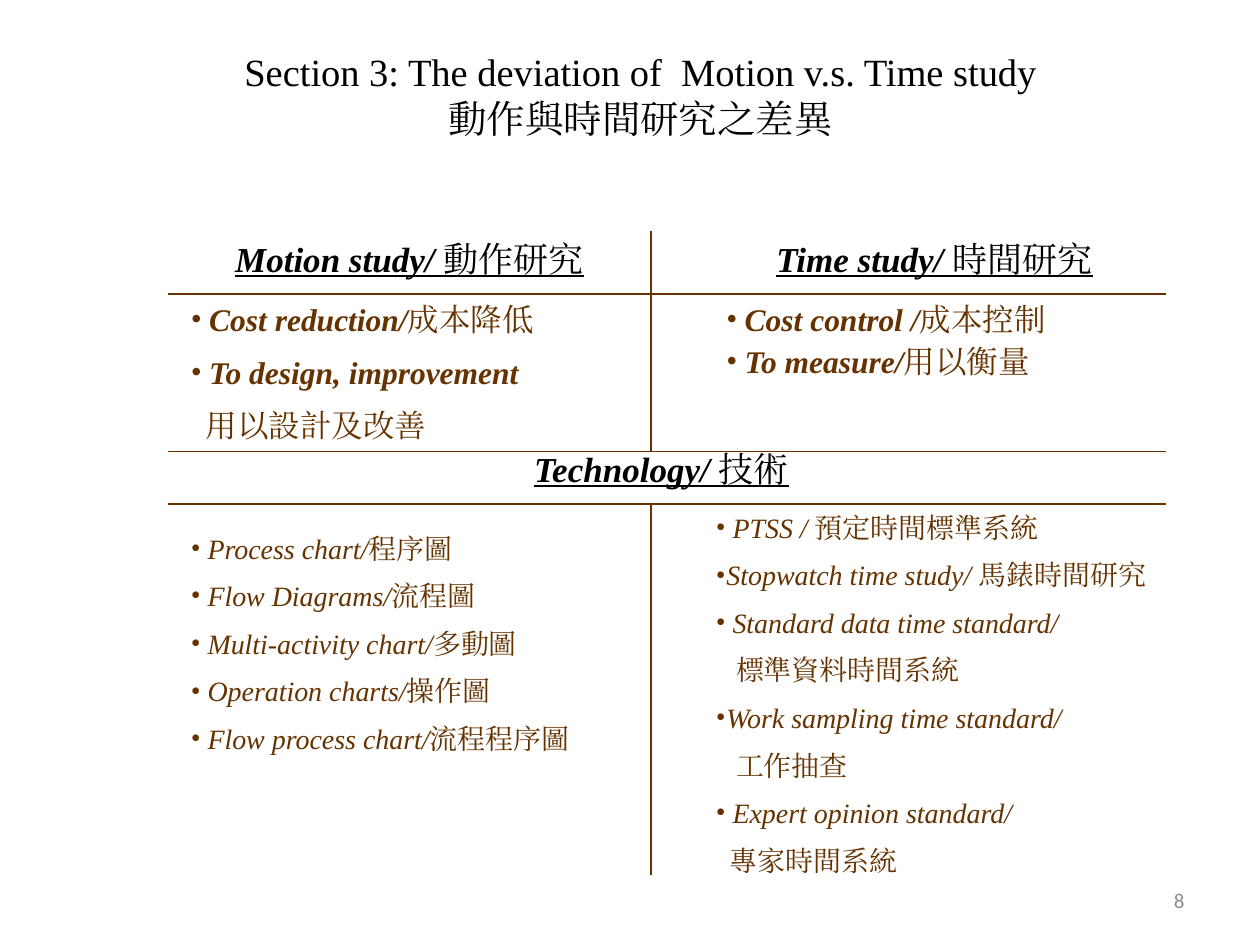
from lxml import etree
from pptx import Presentation
from pptx.dml.color import RGBColor
from pptx.enum.shapes import MSO_CONNECTOR
from pptx.enum.text import MSO_ANCHOR, MSO_AUTO_SIZE, PP_ALIGN
from pptx.oxml.ns import qn
from pptx.util import Pt

STRAIGHT = MSO_CONNECTOR.STRAIGHT
TOP, MIDDLE, BOTTOM = MSO_ANCHOR.TOP, MSO_ANCHOR.MIDDLE, MSO_ANCHOR.BOTTOM
LEFT, CENTER, RIGHT = PP_ALIGN.LEFT, PP_ALIGN.CENTER, PP_ALIGN.RIGHT
GROW = MSO_AUTO_SIZE.SHAPE_TO_FIT_TEXT

COLORS = {"ink": "000000", "brown": "663300", "gray": "8C8C8C"}
SERIF, CJK, SANS = "Times New Roman", "Noto Sans CJK SC", "Calibri"


def add_run(paragraph, text, *, size, color, font=SERIF, bold=False, italic=False, underline=False):
    run = paragraph.add_run()
    run.text = text
    run.font.name = font
    run.font.size = Pt(size)
    run.font.bold, run.font.italic, run.font.underline = bold, italic, underline
    run.font.color.rgb = RGBColor.from_string(COLORS[color])
    east_asian = etree.Element(qn("a:ea"), typeface=SERIF)
    run.font._element.find(qn("a:latin")).addnext(east_asian)


def add_frame(slide, box, anchor=TOP, grow=False):
    frame = slide.shapes.add_textbox(*map(Pt, box)).text_frame
    frame.word_wrap = True
    frame.vertical_anchor = anchor
    if grow:
        frame.auto_size = GROW
    return frame


def format_paragraph(paragraph, *, align=LEFT, margin=0, bullet=False):
    """Half a line of space before; a bullet hangs in the left margin."""
    paragraph.alignment = align
    properties = paragraph._p.get_or_add_pPr()
    properties.set("marL", str(Pt(margin)))
    properties.set("indent", str(Pt(-margin if bullet else 0)))
    space = etree.SubElement(properties, qn("a:spcBef"))
    etree.SubElement(space, qn("a:spcPct"), val="50000")
    if bullet:
        etree.SubElement(properties, qn("a:buFont"), typeface=SERIF)
        etree.SubElement(properties, qn("a:buChar"), char="•")
    else:
        etree.SubElement(properties, qn("a:buNone"))


def add_title(slide, box, english, chinese):
    paragraph = add_frame(slide, box, BOTTOM).paragraphs[0]
    paragraph.alignment = CENTER
    add_run(paragraph, english, size=22, color="ink")
    paragraph.add_line_break()
    add_run(paragraph, chinese, size=22, color="ink", font=CJK)


def add_heading(slide, box, english, chinese):
    paragraph = add_frame(slide, box, grow=True).paragraphs[0]
    format_paragraph(paragraph, align=CENTER)
    add_run(paragraph, english, size=20, color="ink", bold=True, italic=True, underline=True)
    add_run(paragraph, chinese, size=20, color="ink", underline=True)


def add_list(slide, box, items, *, size, bold=False):
    """Each item is (English, Chinese, left margin); no English means a continuation line."""
    frame = add_frame(slide, box, grow=True)
    for index, (english, chinese, margin) in enumerate(items):
        paragraph = frame.add_paragraph() if index else frame.paragraphs[0]
        format_paragraph(paragraph, margin=margin, bullet=bool(english))
        if english:
            add_run(paragraph, english, size=size, color="brown", bold=bold, italic=True)
        if chinese:
            add_run(paragraph, chinese, size=size, color="brown")


def add_rule(slide, start, end):
    rule = slide.shapes.add_connector(STRAIGHT, *map(Pt, (*start, *end)))
    rule.line.color.rgb = RGBColor.from_string(COLORS["brown"])
    rule.line.width = Pt(1)
    etree.SubElement(rule._element.spPr, qn("a:effectLst"))


def add_grid(slide, box, divider, rows):
    """Horizontal rules at rows; the divider leaves the band between the last two open."""
    left, top, width, height = box
    for row in rows:
        add_rule(slide, (left, row), (left + width, row))
    add_rule(slide, (divider, top), (divider, rows[1]))
    add_rule(slide, (divider, rows[2]), (divider, top + height))


def add_page_number(slide, box, number):
    paragraph = add_frame(slide, box, MIDDLE).paragraphs[0]
    paragraph.alignment = RIGHT
    add_run(paragraph, number, size=12, color="gray", font=SANS)


def main():
    presentation = Presentation()
    presentation.slide_width, presentation.slide_height = Pt(720), Pt(540)
    slide = presentation.slides.add_slide(presentation.slide_layouts[6])

    add_title(slide, (96, 12, 540, 72),
              "Section 3: The deviation of  Motion v.s. Time study", "動作與時間研究之差異")
    add_grid(slide, (96, 132, 570, 368), 372, (168, 258, 288))

    # Headings
    add_heading(slide, (114, 132, 240, 31), "Motion study/ ", "動作研究")
    add_heading(slide, (414, 132, 240, 31), "Time study/ ", "時間研究")
    add_heading(slide, (258, 252, 240, 31), "Technology/ ", "技術")

    # Purposes of each study
    purposes = [
        ((102, 168, 240, 29), [("Cost reduction/", "成本降低", 10.5)]),
        ((408, 168, 240, 29), [("Cost control /", "成本控制", 10.5)]),
        ((102, 198, 270, 61), [("To design, improvement", "", 10.5), ("", "用以設計及改善", 8.5)]),
        ((408, 192, 240, 29), [("To measure/", "用以衡量", 10.5)]),
    ]
    for box, items in purposes:
        add_list(slide, box, items, size=18, bold=True)

    # Techniques of each study
    add_list(slide, (102, 300, 270, 142), [
        ("Process chart/", "程序圖", 9.5),
        ("Flow Diagrams/", "流程圖", 9.5),
        ("Multi-activity chart/", "多動圖", 9.5),
        ("Operation charts/", "操作圖", 9.5),
        ("Flow process chart/", "流程程序圖", 9.5),
    ], size=16)
    add_list(slide, (402, 288, 270, 229), [
        ("PTSS / ", "預定時間標準系統", 9.5),
        ("Stopwatch time study/ ", "馬錶時間研究", 6),
        ("Standard data time standard/", "", 9.5),
        ("", "標準資料時間系統", 11.5),
        ("Work sampling time standard/", "", 6),
        ("", "工作抽查", 11.5),
        ("Expert opinion standard/", "", 9.5),
        ("", "專家時間系統", 8),
    ], size=16)

    add_page_number(slide, (516, 500, 168, 29), "8")
    presentation.save("out.pptx")


if __name__ == "__main__":
    main()
